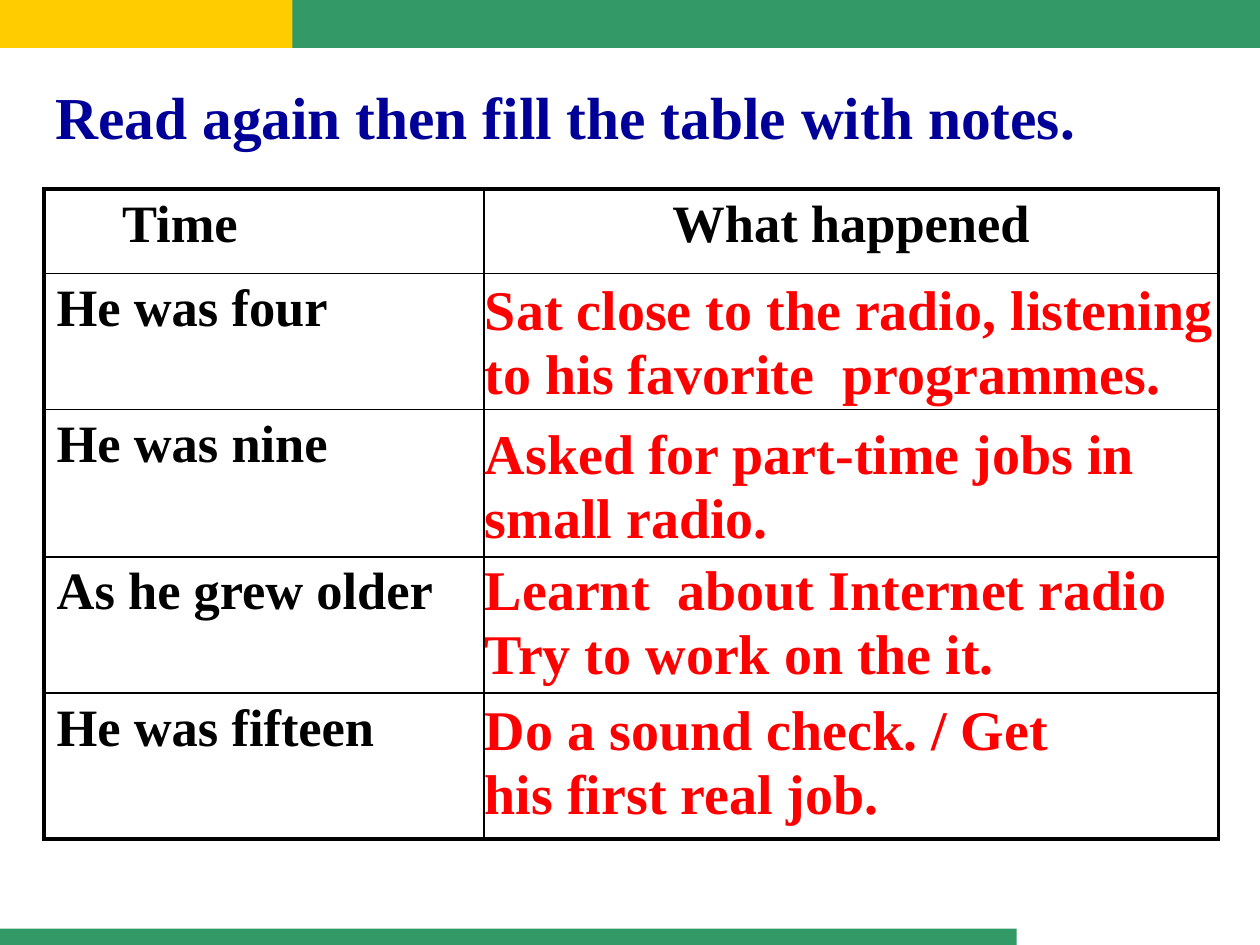
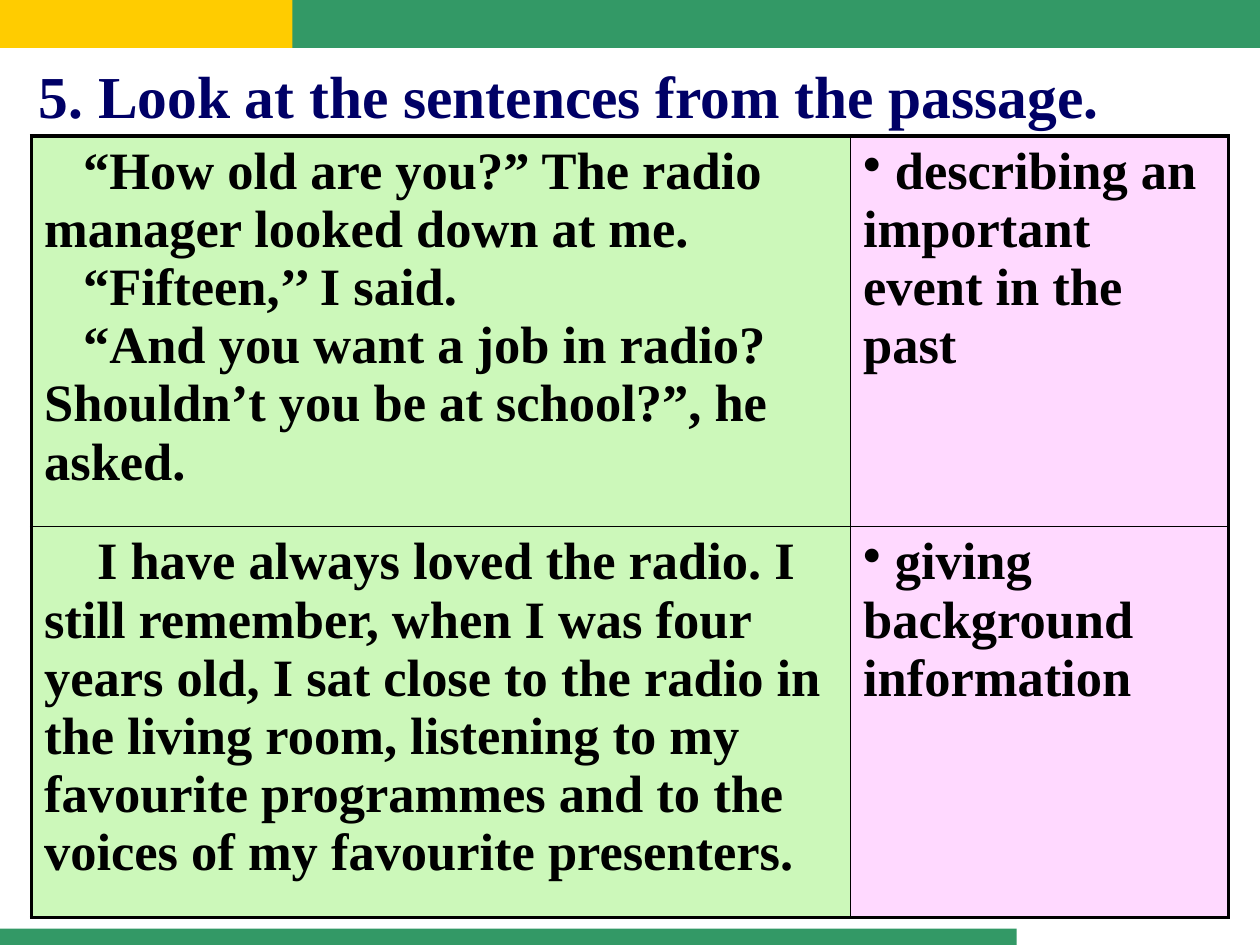
from lxml import etree
from pptx import Presentation
from pptx import util as u
from pptx.dml import color
from pptx.enum import shapes, text
from pptx.oxml import ns

COLORS = {
    "yellow": "FFCC00", "green": "339966", "ink": "000000",
    "blue": "000099", "navy": "000066", "red": "FF0000",
    "mint": "CCF8BA", "pink": "FFD9FF",
}
FONT = "Times New Roman"
TITLE_SIZE, CELL_SIZE, NOTE_SIZE = 34, 30, 32
OUTER_LINE, INNER_LINE = 2.25, 1
BANDS = [
    ((0, 0, 6.89, 0.38), "yellow"),
    ((2.32, 0, 7.68, 0.38), "green"),
    ((0, 7.37, 8.07, 0.13), "green"),
]

TIMES = ["He was four", "He was nine", "As he grew older", "He was fifteen"]
NOTES = [
    (0.67, 6.25, "Sat close to the radio, listening to his favorite  programmes."),
    (1.81, 5.69, "Asked for part-time jobs in small radio."),
    (2.89, 5.66, "Learnt  about Internet radio\nTry to work on the it."),
    (4.0, 5.27, "Do a sound check. / Get his first real job."),
]
PASSAGES = [
    ("“How old are you?” The radio manager looked down at me.\n"
     "“Fifteen,’’ I said.\n"
     "“And you want a job in radio? Shouldn’t you be at school?”, he asked.",
     0.31, " describing an important event in the past"),
    ("I have always loved the radio. I still remember, when I was four years old, "
     "I sat close to the radio in the living room, listening to my favourite "
     "programmes and to the voices of my favourite presenters.",
     0.42, " giving background information"),
]


def rgb(name):
    return color.RGBColor.from_string(COLORS[name])


def inches(box):
    return [u.Inches(length) for length in box]


def sub(parent, tag, **attributes):
    return etree.SubElement(parent, ns.qn(tag), attributes)


def write(frame, words, size, ink):
    frame.text = words
    for paragraph in frame.paragraphs:
        for run in paragraph.runs:
            run.font.name = FONT
            run.font.size = u.Pt(size)
            run.font.bold = True
            run.font.color.rgb = rgb(ink)


def indent_first_line(frame, indent):
    for paragraph in frame.paragraphs:
        properties = paragraph._p.get_or_add_pPr()
        properties.set("marL", "0")
        properties.set("indent", str(u.Inches(indent)))


def add_bullet(frame):
    indent_first_line(frame, 0)
    for paragraph in frame.paragraphs:
        sub(paragraph._p.get_or_add_pPr(), "a:buChar", char="•")


def add_bands(slide):
    for box, fill in BANDS:
        band = slide.shapes.add_shape(shapes.MSO_SHAPE.RECTANGLE, *inches(box))
        band.shadow.inherit = False
        band.fill.solid()
        band.fill.fore_color.rgb = rgb(fill)
        band.line.fill.background()


def add_words(slide, box, words, size, ink, wrap=True):
    frame = slide.shapes.add_textbox(*inches(box)).text_frame
    frame.word_wrap = wrap
    write(frame, words, size, ink)
    return frame


def add_title(slide, box, words, ink, wrap=True):
    frame = add_words(slide, box, words, TITLE_SIZE, ink, wrap)
    properties = frame.paragraphs[0]._p.get_or_add_pPr()
    sub(sub(properties, "a:spcBef"), "a:spcPct", val="50000")
    return frame


def draw_borders(cell, outer_sides):
    properties = cell._tc.get_or_add_tcPr()
    for side in "LRTB":
        width = OUTER_LINE if side in outer_sides else INNER_LINE
        border = sub(properties, f"a:ln{side}", w=str(u.Pt(width)))
        sub(sub(border, "a:solidFill"), "a:srgbClr", val=COLORS["ink"])


def add_grid(slide, left, top, columns, rows, fills=None):
    box = inches((left, top, sum(columns), sum(rows)))
    grid = slide.shapes.add_table(len(rows), len(columns), *box).table
    grid.first_row = grid.horz_banding = False
    for column, width in zip(grid.columns, columns):
        column.width = u.Inches(width)
    for r, height in enumerate(rows):
        grid.rows[r].height = u.Inches(height)
        for c in range(len(columns)):
            edges = {"L": c == 0, "R": c == len(columns) - 1,
                     "T": r == 0, "B": r == len(rows) - 1}
            cell = grid.cell(r, c)
            draw_borders(cell, [side for side, outer in edges.items() if outer])
            if fills:
                cell.fill.solid()
                cell.fill.fore_color.rgb = rgb(fills[c])
            else:
                cell.fill.background()
    return grid


def write_cell(grid, row, column, words):
    frame = grid.cell(row, column).text_frame
    write(frame, words, CELL_SIZE, "ink")
    return frame


def add_timeline(slide, left, top):
    grid = add_grid(slide, left, top, [3.49, 5.83], [0.67, 1.08, 1.17, 1.08, 1.16])
    indent_first_line(write_cell(grid, 0, 0, "Time"), 0.52)
    heading = write_cell(grid, 0, 1, "What happened")
    heading.paragraphs[0].alignment = text.PP_ALIGN.CENTER
    for row, time in enumerate(TIMES, 1):
        write_cell(grid, row, 0, time)
    for offset, width, words in NOTES:
        box = (left + 3.4, top + offset, width, 1.11)
        note = add_words(slide, box, words, NOTE_SIZE, "red")
        for paragraph in note.paragraphs:
            paragraph.line_spacing = 0.95


def add_passages(slide, left, top):
    grid = add_grid(slide, left, top, [6.5, 3], [3.1, 3.1], ["mint", "pink"])
    for row, (passage, indent, purpose) in enumerate(PASSAGES):
        indent_first_line(write_cell(grid, row, 0, passage), indent)
        add_bullet(write_cell(grid, row, 1, purpose))


def build_notes_slide(slide):
    add_bands(slide)
    title = add_title(slide, (0.08, 0.59, 8.82, 0.67),
                      "Read again then fill the table with notes.", "blue")
    title.paragraphs[0].alignment = text.PP_ALIGN.CENTER
    add_timeline(slide, 0.35, 1.5)


def build_sentences_slide(slide):
    add_bands(slide)
    add_passages(slide, 0.25, 1.08)
    add_title(slide, (0.21, 0.42, 9.29, 0.88),
              "5. Look at the sentences from the passage.", "navy", wrap=False)


def main():
    deck = Presentation()
    deck.slide_width, deck.slide_height = u.Inches(10), u.Inches(7.5)
    for build in (build_notes_slide, build_sentences_slide):
        build(deck.slides.add_slide(deck.slide_layouts[6]))
    deck.save("out.pptx")


if __name__ == "__main__":
    main()
